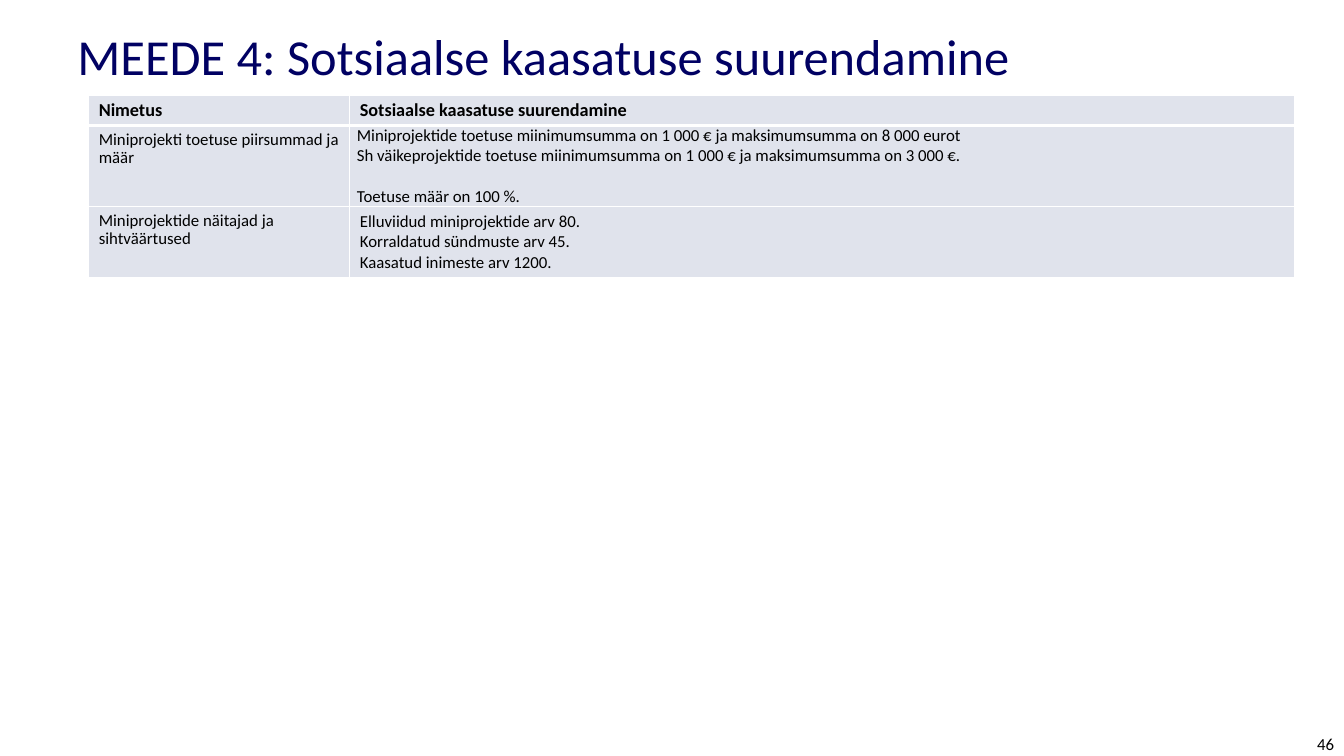
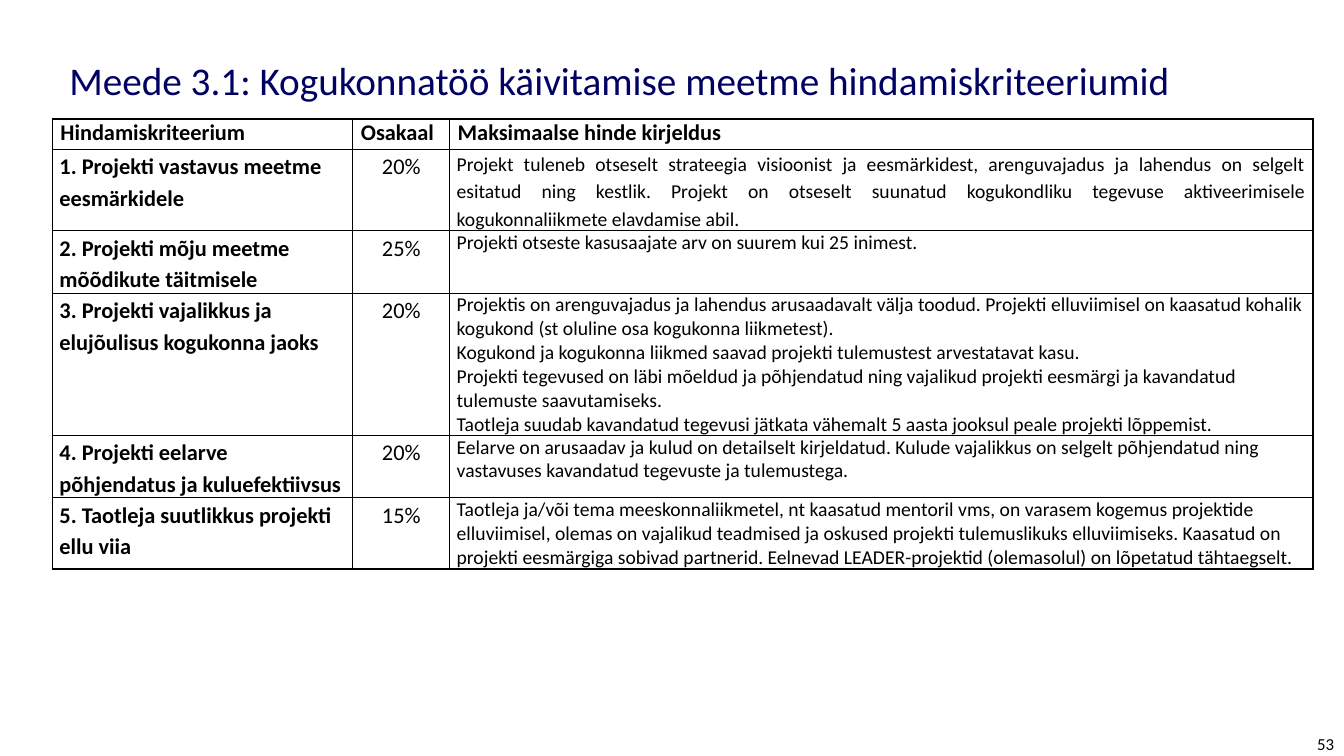
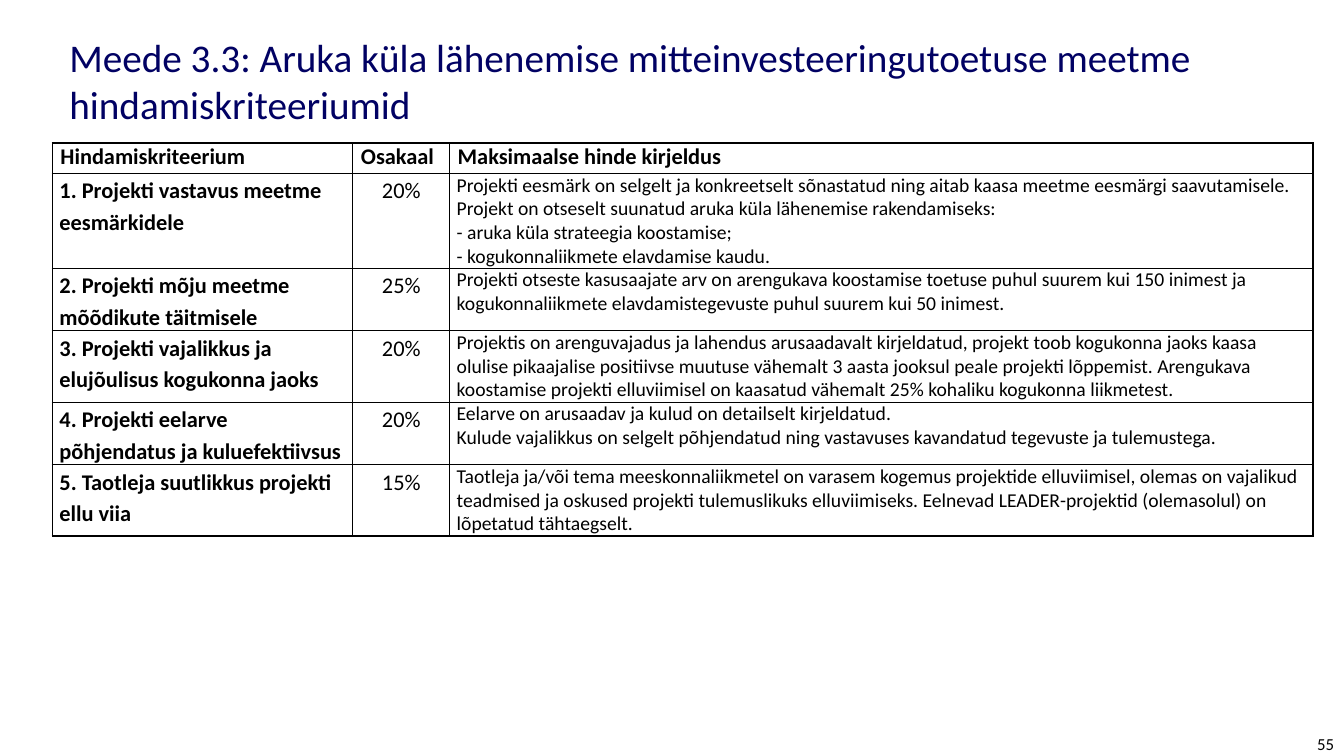
from pptx import Presentation
from pptx.dml.color import RGBColor
from pptx.enum.text import MSO_ANCHOR as ANCHOR, PP_ALIGN as ALIGN
from pptx.oxml import parse_xml
from pptx.oxml.ns import nsdecls
from pptx.util import Inches, Pt

COLORS = {"title": "010163", "text": "000000", "band": "E0E3EC", "white": "FFFFFF"}
FONT = "Calibri"
W, H = 13.33, 7.5

# Content: measure summary
SUMMARY_TITLE = "MEEDE 4: Sotsiaalse kaasatuse suurendamine"
SUMMARY_NUMBER = 46
SUMMARY_ROWS = [
    ("Nimetus", ["Sotsiaalse kaasatuse suurendamine"]),
    ("Miniprojekti toetuse piirsummad ja määr", [
        "Miniprojektide toetuse miinimumsumma on 1 000 € ja maksimumsumma on 8 000 eurot",
        "Sh väikeprojektide toetuse miinimumsumma on 1 000 € ja maksimumsumma on 3 000 €.",
        "Toetuse määr on 100 %."]),
    ("Miniprojektide näitajad ja sihtväärtused", [
        "Elluviidud miniprojektide arv 80.",
        "Korraldatud sündmuste arv 45.",
        "Kaasatud inimeste arv 1200."]),
]

# Content: assessment criteria, shared by both criteria slides
CRITERIA_HEAD = ("Hindamiskriteerium", "Osakaal", "Maksimaalse hinde kirjeldus")
CRITERIA = [
    ("1. Projekti vastavus meetme eesmärkidele", "20%"),
    ("2. Projekti mõju meetme mõõdikute täitmisele", "25%"),
    ("3. Projekti vajalikkus ja elujõulisus kogukonna jaoks", "20%"),
    ("4. Projekti eelarve põhjendatus ja kuluefektiivsus", "20%"),
    ("5. Taotleja suutlikkus projekti ellu viia", "15%"),
]
CRITERIA_SLIDES = [
    {
        "title": "Meede 3.1: Kogukonnatöö käivitamise meetme hindamiskriteeriumid",
        "number": 53,
        "top": 1.18,
        "heights": [0.3, 0.81, 0.62, 1.41, 0.62, 0.71],
        "justified": {1},
        "descriptions": [
            ["Projekt tuleneb otseselt strateegia visioonist ja eesmärkidest, arenguvajadus ja "
             "lahendus on selgelt esitatud ning kestlik. Projekt on otseselt suunatud kogukondliku "
             "tegevuse aktiveerimisele kogukonnaliikmete elavdamise abil."],
            ["Projekti otseste kasusaajate arv on suurem kui 25 inimest."],
            ["Projektis on arenguvajadus ja lahendus arusaadavalt välja toodud. Projekti "
             "elluviimisel on kaasatud kohalik kogukond (st oluline osa kogukonna liikmetest).",
             "Kogukond ja kogukonna liikmed saavad projekti tulemustest arvestatavat kasu.",
             "Projekti tegevused on läbi mõeldud ja põhjendatud ning vajalikud projekti eesmärgi "
             "ja kavandatud tulemuste saavutamiseks.",
             "Taotleja suudab kavandatud tegevusi jätkata vähemalt 5 aasta jooksul peale projekti "
             "lõppemist."],
            ["Eelarve on arusaadav ja kulud on detailselt kirjeldatud. Kulude vajalikkus on "
             "selgelt põhjendatud ning vastavuses kavandatud tegevuste ja tulemustega."],
            ["Taotleja ja/või tema meeskonnaliikmetel, nt kaasatud mentoril vms, on varasem "
             "kogemus projektide elluviimisel, olemas on vajalikud teadmised ja oskused projekti "
             "tulemuslikuks elluviimiseks. Kaasatud on projekti eesmärgiga sobivad partnerid. "
             "Eelnevad LEADER-projektid (olemasolul) on lõpetatud tähtaegselt."],
        ],
    },
    {
        "title": "Meede 3.3: Aruka küla lähenemise mitteinvesteeringutoetuse meetme "
                 "hindamiskriteeriumid",
        "number": 55,
        "top": 1.42,
        "heights": [0.3, 0.94, 0.62, 0.71, 0.62, 0.71],
        "justified": set(),
        "descriptions": [
            ["Projekti eesmärk on selgelt ja konkreetselt sõnastatud ning aitab kaasa meetme "
             "eesmärgi saavutamisele.",
             "Projekt on otseselt suunatud aruka küla lähenemise rakendamiseks:",
             "- aruka küla strateegia koostamise;",
             "- kogukonnaliikmete elavdamise kaudu."],
            ["Projekti otseste kasusaajate arv on arengukava koostamise toetuse puhul suurem kui "
             "150 inimest ja kogukonnaliikmete elavdamistegevuste puhul suurem kui 50 inimest."],
            ["Projektis on arenguvajadus ja lahendus arusaadavalt kirjeldatud, projekt toob "
             "kogukonna jaoks kaasa olulise pikaajalise positiivse muutuse vähemalt 3 aasta "
             "jooksul peale projekti lõppemist. Arengukava koostamise projekti elluviimisel on "
             "kaasatud vähemalt 25% kohaliku kogukonna liikmetest."],
            ["Eelarve on arusaadav ja kulud on detailselt kirjeldatud.",
             "Kulude vajalikkus on selgelt põhjendatud ning vastavuses kavandatud tegevuste ja "
             "tulemustega."],
            ["Taotleja ja/või tema meeskonnaliikmetel on varasem kogemus projektide elluviimisel, "
             "olemas on vajalikud teadmised ja oskused projekti tulemuslikuks elluviimiseks. "
             "Eelnevad LEADER-projektid (olemasolul) on lõpetatud tähtaegselt."],
        ],
    },
]


def write(tf, paras, size, color="text", bold=False, align=ALIGN.LEFT, spacing=None):
    for i, text in enumerate(paras):
        p = tf.paragraphs[0] if i == 0 else tf.add_paragraph()
        p.text = text
        p.alignment = align
        if spacing:
            p.line_spacing = spacing
        p.font.size, p.font.name, p.font.bold = Pt(size), FONT, bold
        p.font.color.rgb = RGBColor.from_string(COLORS[color])


def add_text(s, box, text, size, color="text", align=ALIGN.LEFT):
    tf = s.shapes.add_textbox(*map(Inches, box)).text_frame
    tf.word_wrap = True
    tf.vertical_anchor = ANCHOR.MIDDLE
    write(tf, [text], size, color, align=align)


def add_slide(prs, title, number, title_box, title_size):
    s = prs.slides.add_slide(prs.slide_layouts[6])
    add_text(s, title_box, title, title_size, "title")
    add_text(s, (W - 1.62, H - 0.25, 1.62, 0.25), str(number), 12, align=ALIGN.RIGHT)
    return s


def add_grid(s, left, top, widths, heights):
    frame = s.shapes.add_table(len(heights), len(widths), Inches(left), Inches(top),
                               Inches(sum(widths)), Inches(sum(heights)))
    table = frame.table
    table.first_row = table.horz_banding = False
    for col, width in zip(table.columns, widths):
        col.width = Inches(width)
    for row, height in zip(table.rows, heights):
        row.height = Inches(height)
    return table


def paint(cell, fill, line, borders):
    """Borders are widths in points: left, right, top, bottom."""
    tcPr = cell._tc.get_or_add_tcPr()
    for side, width in zip("LRTB", borders):
        tcPr.append(parse_xml(
            f'<a:ln{side} {nsdecls("a")} w="{Pt(width)}"><a:solidFill>'
            f'<a:srgbClr val="{COLORS[line]}"/></a:solidFill></a:ln{side}>'))
    cell.fill.solid()
    cell.fill.fore_color.rgb = RGBColor.from_string(COLORS[fill])


def set_margins(cell, x, y):
    cell.margin_left = cell.margin_right = Inches(x)
    cell.margin_top = cell.margin_bottom = Inches(y)


def summary_slide(prs):
    s = add_slide(prs, SUMMARY_TITLE, SUMMARY_NUMBER, (0.67, 0.17, 11.96, 0.76), 36)
    table = add_grid(s, 0.88, 0.95, [2.59, 9.37], [0.29, 0.8, 0.7])
    for r, (name, details) in enumerate(SUMMARY_ROWS):
        head = r == 0
        size = 13 if head else 12
        name_cell, detail_cell = table.cell(r, 0), table.cell(r, 1)
        write(name_cell.text_frame, [name], size, bold=head, spacing=0.9)
        write(detail_cell.text_frame, details, size, bold=head, spacing=0.9 if head else None)
        for cell in (name_cell, detail_cell):
            paint(cell, "band", "white", (1, 1, 3 if r == 1 else 1, 3 if head else 1))
    # The support rate stands one line apart from the sums
    sums = table.cell(1, 1)
    set_margins(sums, 0.07, 0)
    sums.text_frame.paragraphs[-1].space_before = Pt(14.6)


def criteria_slide(prs, data):
    s = add_slide(prs, data["title"], data["number"], (0.59, 0.17, 11.77, 1.25), 28)
    table = add_grid(s, 0.52, data["top"], [2.98, 0.96, 8.56], data["heights"])
    last_row, last_col = len(CRITERIA), len(CRITERIA_HEAD) - 1

    # Header row
    for c, text in enumerate(CRITERIA_HEAD):
        cell = table.cell(0, c)
        write(cell.text_frame, [text], 16, bold=True, spacing=0.8)
        cell.vertical_anchor = ANCHOR.MIDDLE
        set_margins(cell, 0.08, 0.04)

    # Criterion, share and description
    for r, ((name, share), details) in enumerate(zip(CRITERIA, data["descriptions"]), 1):
        justified = r in data["justified"]
        write(table.cell(r, 0).text_frame, [name], 16, bold=True, spacing=1.15)
        write(table.cell(r, 1).text_frame, [share], 16, align=ALIGN.CENTER, spacing=1.15)
        write(table.cell(r, 2).text_frame, details, 14,
              align=ALIGN.JUSTIFY if justified else ALIGN.LEFT,
              spacing=1.15 if justified else None)
        for c in range(last_col + 1):
            set_margins(table.cell(r, c), 0.07, 0)

    # Outer edges are heavier than inner lines
    for r in range(last_row + 1):
        for c in range(last_col + 1):
            edges = (c == 0, c == last_col, r == 0, r == last_row)
            paint(table.cell(r, c), "white", "text", [1.5 if edge else 1 for edge in edges])


def main():
    prs = Presentation()
    prs.slide_width, prs.slide_height = Inches(W), Inches(H)
    summary_slide(prs)
    for data in CRITERIA_SLIDES:
        criteria_slide(prs, data)
    prs.save("out.pptx")


if __name__ == "__main__":
    main()
